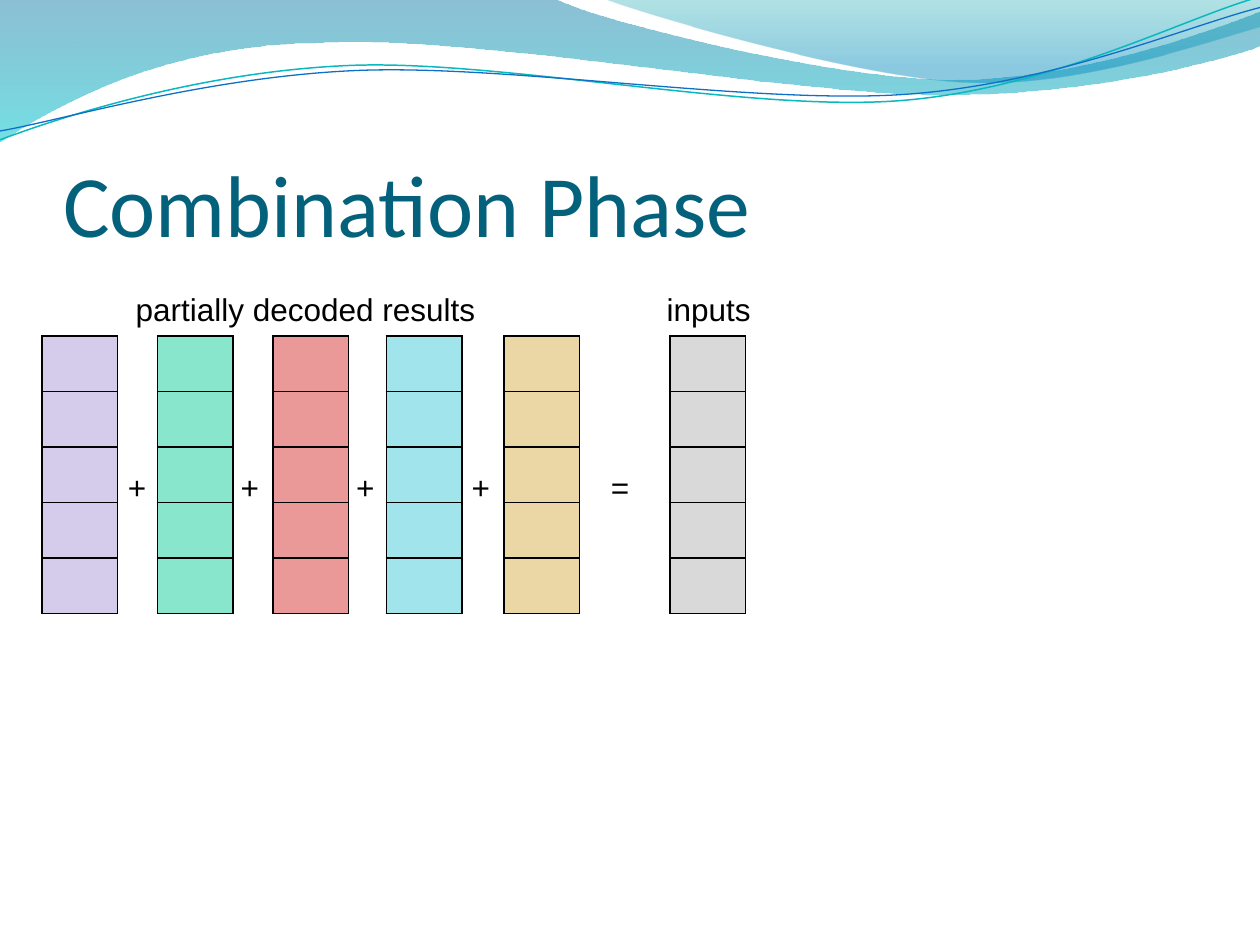
import math
from dataclasses import dataclass
from typing import Optional

from lxml import etree
from pptx import Presentation
from pptx import util as u
from pptx.dml.color import RGBColor
from pptx.enum import text
from pptx.oxml.ns import qn

COLUMNS, ROWS = 120, 90
UNIT = u.Inches(10) / COLUMNS
BLACK = "000000"


@dataclass
class Stop:
    position: float
    color: str
    opacity: int


@dataclass
class Wave:
    start: tuple
    segments: list
    stops: Optional[list] = None
    line: Optional[str] = None
    weight: float = 0
    tilt: float = 0
    centre: tuple = (0, 0)


@dataclass
class Stack:
    column: float
    color: str
    opacity: int = 50


@dataclass
class Label:
    words: str
    column: float
    row: float
    width: float
    centred: bool = False


WAVES = [
    Wave((0, -0.01), [
        [(4.4, -0.01)],
        [(4.76, 0.17), (6.64, 0.63), (7.58, 0.63)],
        [(8.53, 0.63), (9.58, 0.26), (10, 0.09)],
        [(10.01, 0.36)],
        [(9.83, 0.44), (8.7, 0.76), (7.46, 0.75)],
        [(6.22, 0.75), (3.82, 0.28), (2.57, 0.34)],
        [(1.29, 0.35), (0.46, 0.83), (-0.01, 1.13)],
        [(0, -0.01)]],
        stops=[Stop(0, "0074A1", 45), Stop(1, "00C6CF", 55)]),
    Wave((4.79, -0.01), [
        [(5.09, 0.11), (6.82, 0.62), (7.69, 0.65)],
        [(8.56, 0.69), (9.61, 0.32), (10, 0.21)],
        [(10, 0)],
        [(4.79, -0.01)]],
        stops=[Stop(0, "00A1A9", 30), Stop(0.8, "008BBF", 45)]),
    Wave((0, 1.11), [
        [(0.48, 0.93), (1.58, 0.57), (2.77, 0.52)],
        [(3.95, 0.47), (5.93, 0.89), (7.13, 0.8)],
        [(8.33, 0.71), (9.38, 0.15), (9.98, -0.02)]],
        line="0AB8BF", weight=0.85, tilt=-2.7, centre=(4.99, 0.57)),
    Wave((0, 1.04), [
        [(0.47, 0.96), (1.64, 0.61), (2.83, 0.56)],
        [(4.03, 0.51), (5.97, 0.83), (7.17, 0.75)],
        [(8.36, 0.67), (9.41, 0.21), (10, 0.06)]],
        line="0F6FC6", weight=0.75, tilt=-2.7, centre=(5, 0.59)),
]

STACKS = [
    Stack(63.8, "D9D9D9", 100), Stack(48, "D9AE4E"), Stack(36.8, "45CBD9"),
    Stack(26, "D93332"), Stack(15, "10CF9B"), Stack(4, "AC9BD9"),
]

LABELS = [
    Label("=", 57, 44, 4.2),
    Label("inputs", 61, 27, 13, True),
    *(Label("+", column, 44, 4.3) for column in (11, 21.75, 32.75, 43.75)),
    Label("partially decoded results ", 4, 27, 51, True),
]


def grid(count: float) -> int:
    return round(count * UNIT)


def rgb(value: str) -> RGBColor:
    return RGBColor.from_string(value)


def set_opacity(fill_element, percent: int) -> None:
    for color in fill_element.iter(qn("a:srgbClr")):
        etree.SubElement(color, qn("a:alpha"), val=str(percent * 1000))


def level(point: tuple, wave: Wave) -> tuple:
    angle = math.radians(-wave.tilt)
    x, y = point[0] - wave.centre[0], point[1] - wave.centre[1]
    return (
        u.Inches(wave.centre[0] + x * math.cos(angle) - y * math.sin(angle)),
        u.Inches(wave.centre[1] + x * math.sin(angle) + y * math.cos(angle)))


def bend(shape, segments: list) -> None:
    lines = list(shape.element.spPr.iter(qn("a:lnTo")))
    for line, segment in zip(lines, segments):
        if len(segment) == 1:
            continue
        curve = etree.Element(qn("a:cubicBezTo"))
        for x, y in segment:
            etree.SubElement(
                curve, qn("a:pt"), x=str(x - shape.left), y=str(y - shape.top))
        line.getparent().replace(line, curve)


def draw_wave(page, wave: Wave) -> None:
    segments = [[level(point, wave) for point in part] for part in wave.segments]
    builder = page.shapes.build_freeform(*level(wave.start, wave))
    builder.add_line_segments(
        [part[-1] for part in segments], close=wave.stops is not None)
    shape = builder.convert_to_shape()
    bend(shape, segments)
    shape.rotation = wave.tilt
    shape.shadow.inherit = False
    if wave.stops:
        shape.line.fill.background()
        shape.fill.gradient()
        shape.fill.gradient_angle = 270
        for target, stop in zip(shape.fill.gradient_stops, wave.stops):
            target.color.rgb = rgb(stop.color)
            target.position = stop.position
        elements = list(shape.element.spPr.iter(qn("a:gs")))
        for element, stop in zip(elements, wave.stops):
            set_opacity(element, stop.opacity)
    else:
        shape.fill.background()
        shape.line.color.rgb = rgb(wave.line)
        shape.line.width = u.Pt(wave.weight)


def add_borders(cell) -> None:
    properties = cell._tc.get_or_add_tcPr()
    for index, side in enumerate(("lnL", "lnR", "lnT", "lnB")):
        border = etree.Element(qn(f"a:{side}"), w=str(u.Pt(1)))
        paint = etree.SubElement(border, qn("a:solidFill"))
        etree.SubElement(paint, qn("a:srgbClr"), val=BLACK)
        properties.insert(index, border)


def draw_stack(page, stack: Stack) -> None:
    frame = page.shapes.add_table(
        5, 1, grid(stack.column), grid(32), grid(7.2), grid(26.45))
    table = frame.table
    table.first_row = table.horz_banding = False
    for cell in table.iter_cells():
        cell.fill.solid()
        cell.fill.fore_color.rgb = rgb(stack.color)
        if stack.opacity < 100:
            set_opacity(cell._tc.tcPr, stack.opacity)
        add_borders(cell)


def format_font(font, name: str, size: float, color: str) -> None:
    font.name = name
    font.size = u.Pt(size)
    font.color.rgb = rgb(color)


def draw_label(page, label: Label) -> None:
    box = page.shapes.add_textbox(
        grid(label.column), grid(label.row), grid(label.width), grid(4.85))
    box.text_frame.word_wrap = label.centred
    box.text_frame.auto_size = text.MSO_AUTO_SIZE.SHAPE_TO_FIT_TEXT
    para = box.text_frame.paragraphs[0]
    para.text = label.words
    para.alignment = text.PP_ALIGN.CENTER if label.centred else text.PP_ALIGN.LEFT
    format_font(para.font, "Arial", 18, BLACK)


def draw_title(page, words: str) -> None:
    title = page.shapes.title
    title.left, title.top = grid(6), grid(9.25)
    title.width, title.height = grid(108), grid(15)
    frame = title.text_frame
    frame.auto_size = text.MSO_AUTO_SIZE.NONE
    frame.vertical_anchor = text.MSO_ANCHOR.BOTTOM
    frame.margin_left = frame.margin_right = frame.margin_bottom = 0
    frame.margin_top = u.Inches(0.05)
    para = frame.paragraphs[0]
    para.text = words
    para.alignment = text.PP_ALIGN.LEFT
    format_font(para.font, "Calibri", 50, "04617B")
    page.shapes._spTree.append(title.element)


def main() -> None:
    deck = Presentation()
    deck.slide_width, deck.slide_height = grid(COLUMNS), grid(ROWS)
    page = deck.slides.add_slide(deck.slide_layouts[5])
    for wave in WAVES:
        draw_wave(page, wave)
    draw_title(page, "Combination Phase")
    for stack in STACKS:
        draw_stack(page, stack)
    for label in LABELS:
        draw_label(page, label)
    deck.save("out.pptx")


if __name__ == "__main__":
    main()
